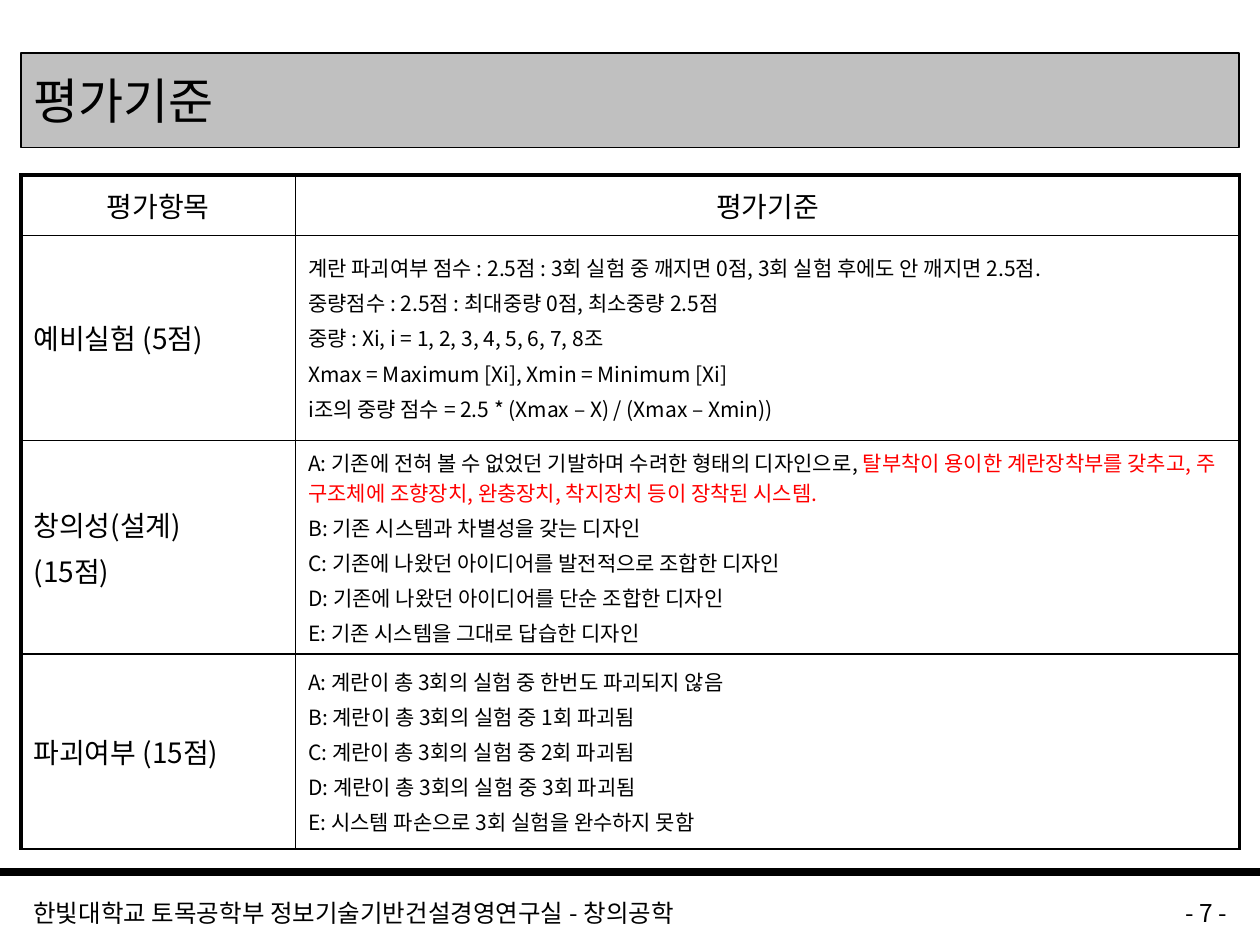
"""Builds the evaluation criteria slide of a creative engineering course."""
from typing import NamedTuple

from lxml.etree import SubElement
from pptx import Presentation
from pptx.dml.color import RGBColor
from pptx.enum.shapes import MSO_CONNECTOR as Connector, MSO_SHAPE as Shape
from pptx.enum.text import MSO_ANCHOR as Anchor, PP_ALIGN as Align
from pptx.oxml.ns import qn
from pptx.util import Inches, Pt

BLACK = RGBColor(0x00, 0x00, 0x00)
RED = RGBColor(0xFF, 0x00, 0x00)
SILVER = RGBColor(0xC0, 0xC0, 0xC0)
FONT = "Noto Sans CJK KR"
WIDTH, HEIGHT = Inches(10), Inches(7.5)
MARGIN = 1 / 60
CONTENT = 1 - 2 * MARGIN
COLUMN_SHARES = (0.218, 0.749)
ROW_SHARES = (0.064, 0.217, 0.217, 0.206)
THICK, THIN = 2.25, 1


class Span(NamedTuple):
    text: str
    color: RGBColor = BLACK


class Entry(NamedTuple):
    lines: list[list[Span]]
    size: int
    align: Align = Align.LEFT


class Footer(NamedTuple):
    text: str
    left: float
    width: float
    align: Align


def entry(size: int, *lines: str, align: Align = Align.LEFT) -> Entry:
    """Make an entry of plain black lines."""
    return Entry([[Span(line)] for line in lines], size, align)


DESIGN_GRADES = entry(
    12,
    "B: 기존 시스템과 차별성을 갖는 디자인",
    "C: 기존에 나왔던 아이디어를 발전적으로 조합한 디자인",
    "D: 기존에 나왔던 아이디어를 단순 조합한 디자인",
    "E: 기존 시스템을 그대로 답습한 디자인",
)
TOP_DESIGN_GRADE = [
    Span("A: 기존에 전혀 볼 수 없었던 기발하며 수려한 형태의 디자인으로, "),
    Span("탈부착이 용이한 계란장착부를 갖추고, 주 구조체에 조향장치, 완충장치, "
         "착지장치 등이 장착된 시스템.", RED),
]
CRITERIA = [
    (entry(16, "평가항목", align=Align.CENTER), entry(16, "평가기준", align=Align.CENTER)),
    (entry(16, "예비실험 (5점)"), entry(
        12,
        "계란 파괴여부 점수 : 2.5점 : 3회 실험 중 깨지면 0점, 3회 실험 후에도 안 깨지면 2.5점.",
        "중량점수 : 2.5점 : 최대중량 0점, 최소중량 2.5점",
        "중량 : Xi, i = 1, 2, 3, 4, 5, 6, 7, 8조",
        "Xmax = Maximum [Xi], Xmin = Minimum [Xi]",
        "i조의 중량 점수 = 2.5 * (Xmax – X) / (Xmax – Xmin))",
    )),
    (entry(16, "창의성(설계)", "(15점)"),
     Entry([TOP_DESIGN_GRADE, *DESIGN_GRADES.lines], 12)),
    (entry(16, "파괴여부 (15점)"), entry(
        12,
        "A: 계란이 총 3회의 실험 중 한번도 파괴되지 않음",
        "B: 계란이 총 3회의 실험 중 1회 파괴됨",
        "C: 계란이 총 3회의 실험 중 2회 파괴됨",
        "D: 계란이 총 3회의 실험 중 3회 파괴됨",
        "E: 시스템 파손으로 3회 실험을 완수하지 못함",
    )),
]
FOOTERS = [
    Footer("한빛대학교 토목공학부 정보기술기반건설경영연구실 - 창의공학", MARGIN, 0.783, Align.LEFT),
    Footer("- 7 -", 0.817, 0.167, Align.RIGHT),
]


def across(share: float) -> int:
    """Turn a share of the slide width into a length."""
    return round(WIDTH * share)


def down(share: float) -> int:
    """Turn a share of the slide height into a length."""
    return round(HEIGHT * share)


def write(frame, content: Entry, spacing: float = 0) -> None:
    """Fill a text frame, with spacing as a share of the text size."""
    frame.word_wrap = True
    frame.text = "\n".join("" for _ in content.lines)
    for paragraph, spans in zip(frame.paragraphs, content.lines):
        paragraph.alignment = content.align
        paragraph.space_before = Pt(content.size * spacing)
        for span in spans:
            run = paragraph.add_run()
            run.text = span.text
            run.font.size = Pt(content.size)
            run.font.color.rgb = span.color
            run.font.name = FONT
            SubElement(run.font._element, qn("a:ea"), typeface=FONT)


def draw_borders(cell, widths: dict[str, float]) -> None:
    """Give each named side of a cell a black border."""
    properties = cell._tc.get_or_add_tcPr()
    for position, (side, points) in enumerate(widths.items()):
        border = SubElement(properties, qn(f"a:{side}"), w=str(Pt(points)))
        fill = SubElement(border, qn("a:solidFill"))
        SubElement(fill, qn("a:srgbClr"), val=str(BLACK))
        properties.insert(position, border)


def draw_title(slide) -> None:
    """Draw the title band."""
    band = slide.shapes.add_shape(
        Shape.RECTANGLE, across(MARGIN), down(0.056), across(CONTENT), down(0.1))
    band.shadow.inherit = False
    band.fill.solid()
    band.fill.fore_color.rgb = SILVER
    band.line.color.rgb = BLACK
    band.line.width = Pt(0.75)
    band.text_frame.vertical_anchor = Anchor.MIDDLE
    write(band.text_frame, entry(28, "평가기준"))


def draw_criteria(slide) -> None:
    """Draw the table of criteria."""
    table = slide.shapes.add_table(
        len(ROW_SHARES), len(COLUMN_SHARES), across(MARGIN), down(0.185),
        across(CONTENT), down(sum(ROW_SHARES))).table
    table.first_row = table.horz_banding = False
    for column, share in zip(table.columns, COLUMN_SHARES):
        column.width = across(share)
    for row, share in zip(table.rows, ROW_SHARES):
        row.height = down(share)
    for r, contents in enumerate(CRITERIA):
        for c, content in enumerate(contents):
            cell = table.cell(r, c)
            cell.fill.background()
            cell.vertical_anchor = Anchor.MIDDLE
            write(cell.text_frame, content, spacing=0.22)
            draw_borders(cell, {
                "lnL": THICK if c == 0 else THIN,
                "lnR": THICK if c == len(contents) - 1 else THIN,
                "lnT": THICK if r == 0 else THIN,
                "lnB": THIN,
            })


def draw_footer(slide) -> None:
    """Draw the footer rule and its texts."""
    rule = slide.shapes.add_connector(
        Connector.STRAIGHT, 0, down(0.923), WIDTH, down(0.923))
    rule.line.color.rgb = BLACK
    rule.line.width = Pt(4.5)
    SubElement(rule._element.spPr, qn("a:effectLst"))
    for footer in FOOTERS:
        box = slide.shapes.add_textbox(
            across(footer.left), down(0.944), across(footer.width), down(0.033))
        write(box.text_frame, entry(14, footer.text, align=footer.align))


def main() -> None:
    """Build and save the slide."""
    deck = Presentation()
    deck.slide_width, deck.slide_height = WIDTH, HEIGHT
    slide = deck.slides.add_slide(deck.slide_layouts[6])
    draw_title(slide)
    draw_criteria(slide)
    draw_footer(slide)
    deck.save("out.pptx")


if __name__ == "__main__":
    main()
